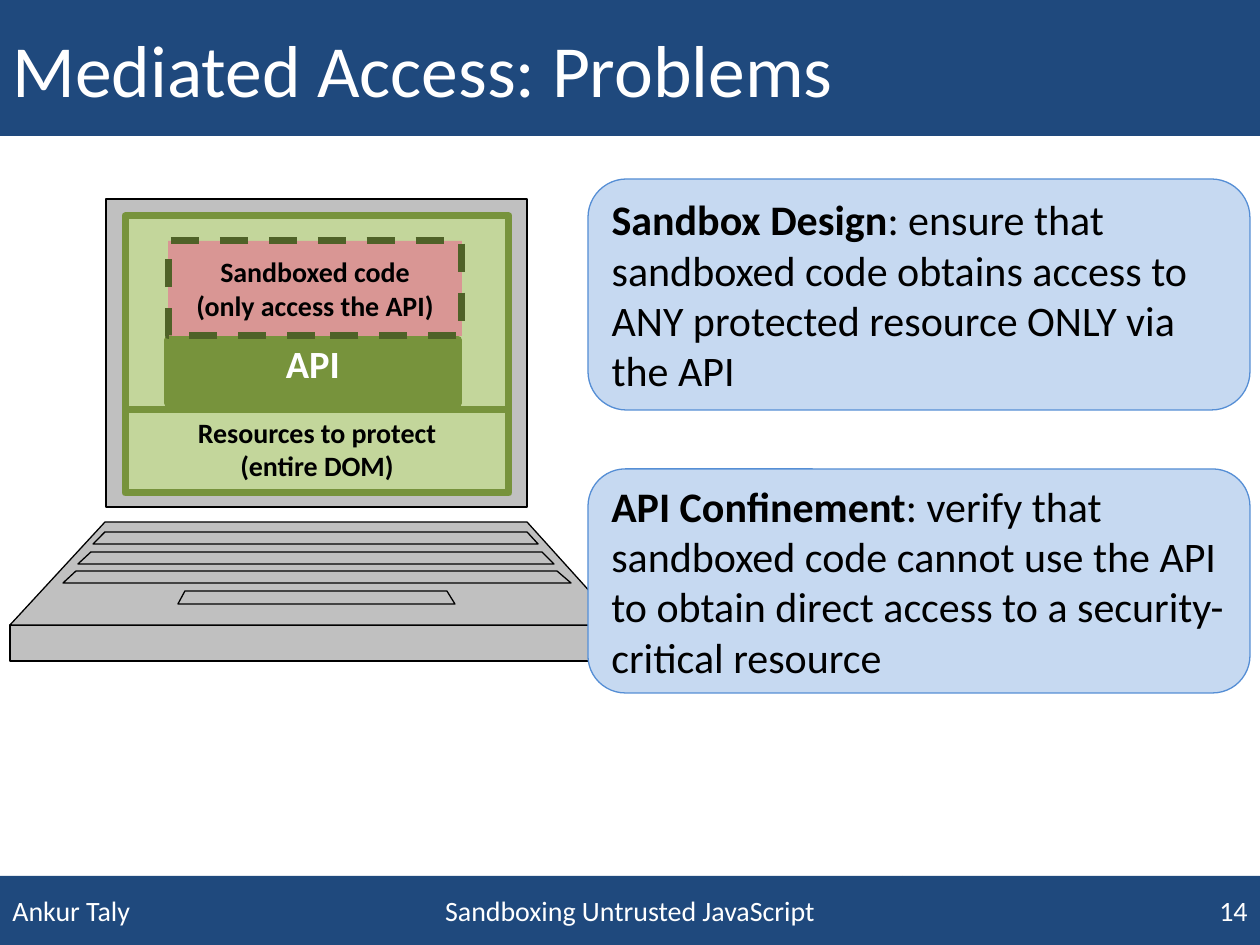
from dataclasses import dataclass

from pptx import Presentation
from pptx.dml.color import RGBColor
from pptx.enum.dml import MSO_LINE
from pptx.enum.shapes import MSO_SHAPE
from pptx.enum.text import MSO_ANCHOR, PP_ALIGN
from pptx.util import Emu, Pt

RECTANGLE, ROUNDED = MSO_SHAPE.RECTANGLE, MSO_SHAPE.ROUNDED_RECTANGLE
LEFT, CENTER, RIGHT = PP_ALIGN.LEFT, PP_ALIGN.CENTER, PP_ALIGN.RIGHT
TOP, MIDDLE = MSO_ANCHOR.TOP, MSO_ANCHOR.MIDDLE
DASH = MSO_LINE.DASH

EMU_PER_PX = 914400 / 126
SLIDE_WIDTH, SLIDE_HEIGHT = 1260, 945


@dataclass(frozen=True)
class Theme:
    font: str = "Calibri"
    white: str = "FFFFFF"
    black: str = "000000"
    navy: str = "1F497D"
    grey: str = "C0C0C0"
    light_green: str = "C3D69B"
    green: str = "77933C"
    dark_green: str = "4F6228"
    pink: str = "D99694"
    light_blue: str = "C6D9F1"
    blue: str = "558ED5"
    title_size: int = 42
    callout_size: int = 24
    api_size: int = 22
    label_size: int = 16
    thin: float = 0.75
    thick: float = 4
    api_border: float = 4.5


THEME = Theme()


def px(value):
    return Emu(round(value * EMU_PER_PX))


def style(shape, fill, line=None, width=THEME.thin, dash=None):
    shape.shadow.inherit = False
    shape.fill.solid()
    shape.fill.fore_color.rgb = RGBColor.from_string(fill)
    if line is None:
        shape.line.fill.background()
        return
    shape.line.color.rgb = RGBColor.from_string(line)
    shape.line.width = Pt(width)
    if dash is not None:
        shape.line.dash_style = dash


def add_box(slide, box, fill, line=None, width=THEME.thin, dash=None, kind=RECTANGLE):
    shape = slide.shapes.add_shape(kind, *map(px, box))
    style(shape, fill, line, width, dash)
    return shape


def format_paragraph(paragraph, size, color, align, bold=None):
    paragraph.alignment = align
    font = paragraph.font
    font.name = THEME.font
    font.size = Pt(size)
    font.bold = bold
    font.color.rgb = RGBColor.from_string(color)


def write(shape, text, size, color, align=CENTER, anchor=MIDDLE, bold=True):
    frame = shape.text_frame
    frame.vertical_anchor = anchor
    frame.text = text
    for paragraph in frame.paragraphs:
        format_paragraph(paragraph, size, color, align, bold)


def add_bar(slide, box, text, size, align=LEFT):
    bar = add_box(slide, box, THEME.navy)
    write(bar, text, size, THEME.white, align, bold=False)


def add_trapezoid(slide, top_edge, bottom_edge):
    """Each edge is (left, right, y)."""
    (left, right, top), (low_left, low_right, bottom) = top_edge, bottom_edge
    builder = slide.shapes.build_freeform(left, top, scale=EMU_PER_PX)
    builder.add_line_segments(
        [(right, top), (low_right, bottom), (low_left, bottom)], close=True
    )
    style(builder.convert_to_shape(), THEME.grey, THEME.black)


def add_laptop(slide):
    lid, base = (106, 199, 421, 308), (10, 625, 610, 36)
    for box in (lid, base):
        add_box(slide, box, THEME.grey, THEME.black)
    deck = ((105, 527, 522), (10, 620, 625))
    key_rows = [
        ((105, 527, 532), (93, 538, 544)),
        ((91, 542, 552), (78, 554, 564)),
        ((76, 557, 571), (63, 571, 583)),
    ]
    space_bar = ((185, 447, 591), (178, 455, 604))
    for edges in (deck, *key_rows, space_bar):
        add_trapezoid(slide, *edges)


def add_screen(slide):
    add_box(slide, (125, 216, 384, 274), THEME.light_green, THEME.green, THEME.thick)

    resources = add_box(
        slide, (125, 409, 384, 84), THEME.light_green, THEME.green, THEME.thick
    )
    write(resources, "Resources to protect\n(entire DOM)",
          THEME.label_size, THEME.black, anchor=TOP)

    api = add_box(slide, (168, 340, 290, 63), THEME.green, THEME.green, THEME.api_border)
    write(api, "API", THEME.api_size, THEME.white, anchor=TOP)
    api.text_frame.margin_top = api.text_frame.margin_bottom = 0

    sandbox = add_box(
        slide, (168, 241, 294, 95), THEME.pink, THEME.dark_green, THEME.thick, DASH
    )
    write(sandbox, "Sandboxed code\n(only access the API)", THEME.label_size, THEME.black)


def add_callout(slide, box, heading, body):
    callout = add_box(slide, box, THEME.light_blue, THEME.blue, kind=ROUNDED)
    callout.text_frame.vertical_anchor = MIDDLE
    paragraph = callout.text_frame.paragraphs[0]
    format_paragraph(paragraph, THEME.callout_size, THEME.black, LEFT)
    for text, bold in ((heading, True), (body, False)):
        run = paragraph.add_run()
        run.text = text
        run.font.bold = bold


def add_footer(slide):
    top, left = 876, 0
    for width, text, align in (
        (357, "Ankur Taly", LEFT),
        (546, "Sandboxing Untrusted JavaScript", CENTER),
        (357, "14", RIGHT),
    ):
        box = (left, top, width, SLIDE_HEIGHT - top)
        add_bar(slide, box, text, THEME.label_size, align)
        left += width


def main():
    presentation = Presentation()
    presentation.slide_width = px(SLIDE_WIDTH)
    presentation.slide_height = px(SLIDE_HEIGHT)
    slide = presentation.slides.add_slide(presentation.slide_layouts[6])

    add_bar(slide, (0, 0, SLIDE_WIDTH, 136), "Mediated Access: Problems", THEME.title_size)
    add_footer(slide)
    add_laptop(slide)
    add_screen(slide)
    add_callout(
        slide, (588, 179, 662, 231), "Sandbox Design",
        ": ensure that sandboxed code obtains access to ANY protected resource"
        " ONLY via the API",
    )
    add_callout(
        slide, (588, 469, 662, 224), "API Confinement",
        ": verify that sandboxed code cannot use the API to obtain direct access"
        " to a security-critical resource",
    )
    presentation.save("out.pptx")


if __name__ == "__main__":
    main()
